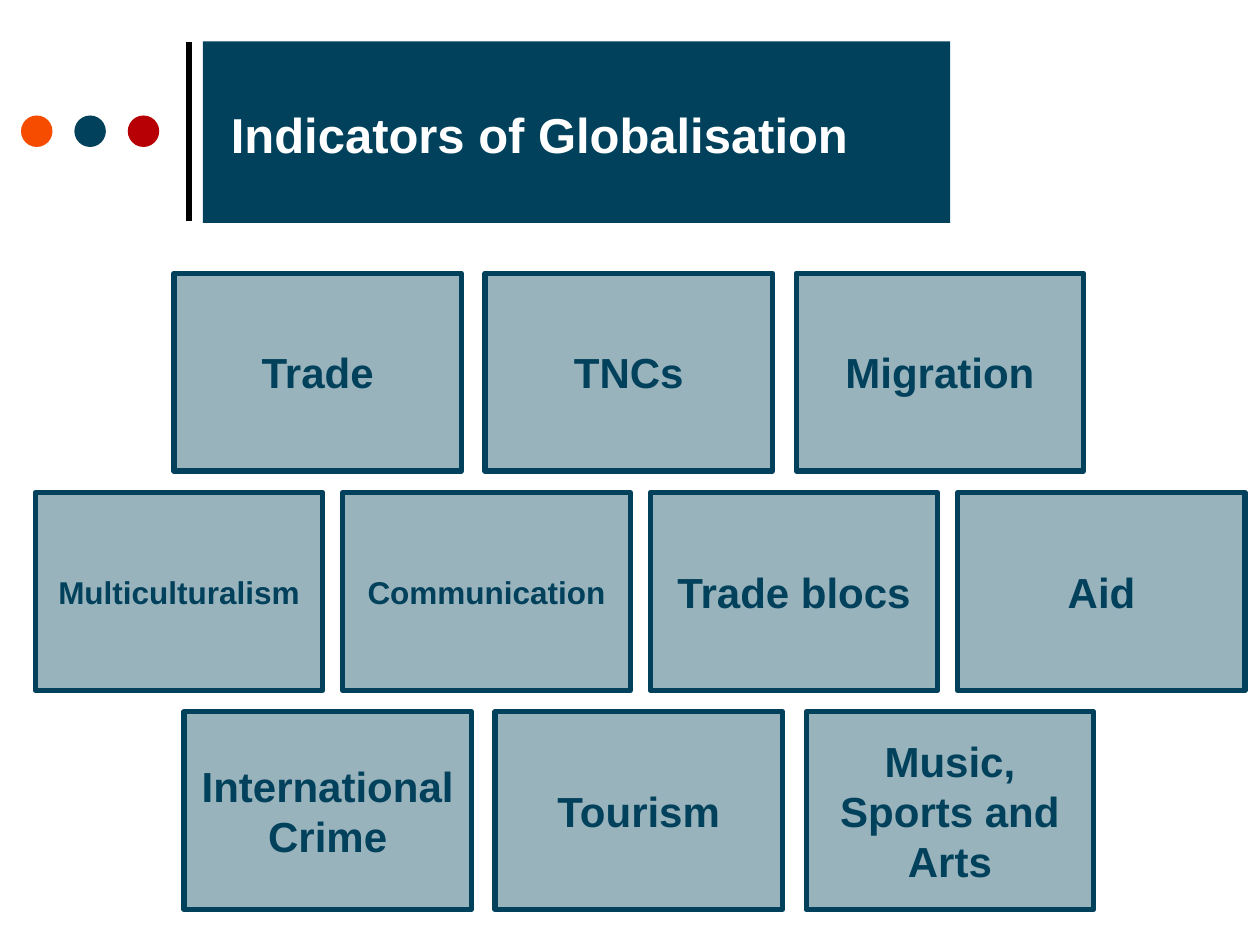
import pptx
import pptx.util
from pptx.dml.color import RGBColor
from pptx.enum.shapes import MSO_CONNECTOR, MSO_SHAPE
from pptx.enum.text import MSO_ANCHOR, PP_ALIGN
from pptx.oxml.ns import qn
from lxml import etree

Pt = pptx.util.Pt

NAVY = RGBColor(0x01, 0x41, 0x5B)
PALE = RGBColor(0x99, 0xB3, 0xBD)
ORANGE = RGBColor(0xF5, 0x4C, 0x00)
RED = RGBColor(0xB7, 0x00, 0x05)
BLACK = RGBColor(0, 0, 0)
WHITE = RGBColor(0xFF, 0xFF, 0xFF)

TITLE = "Indicators of Globalisation"
DOTS = [ORANGE, NAVY, RED]
ROWS = [
    (99.4, 177.8, [("Trade", 24), ("TNCs", 24), ("Migration", 24)]),
    (20.2, 175.7, [("Multiculturalism", 18), ("Communication", 18),
                   ("Trade blocs", 24), ("Aid", 24)]),
    (105.1, 177.8, [("International Crime", 24), ("Tourism", 24),
                    ("Music, Sports and Arts", 24)]),
]
TOP, STEP = 156.2, 125.3
WIDE, HIGH = 164.2, 113


def add_shape(slide, kind, box, fill):
    shape = slide.shapes.add_shape(kind, *map(Pt, box))
    shape.shadow.inherit = False
    shape.fill.solid()
    shape.fill.fore_color.rgb = fill
    shape.line.fill.background()
    return shape


def set_text(shape, text, size, color, align):
    frame = shape.text_frame
    frame.word_wrap = True
    frame.vertical_anchor = MSO_ANCHOR.MIDDLE
    frame.text = text
    para = frame.paragraphs[0]
    para.alignment = align
    font = para.runs[0].font
    font.name = "Arial"
    font.size = Pt(size)
    font.bold = True
    font.color.rgb = color


def add_head(slide):
    rule = slide.shapes.add_connector(
        MSO_CONNECTOR.STRAIGHT, Pt(108), Pt(126), Pt(108), Pt(24))
    rule.line.color.rgb = BLACK
    rule.line.width = Pt(3)
    etree.SubElement(rule.element.spPr, qn("a:effectLst"))
    for col, color in enumerate(DOTS):
        add_shape(slide, MSO_SHAPE.OVAL, (12 + col * 30.5, 66, 18, 18), color)
    title = add_shape(slide, MSO_SHAPE.RECTANGLE, (116, 23.6, 427, 103.8), NAVY)
    set_text(title, TITLE, 28, WHITE, PP_ALIGN.LEFT)
    title.text_frame.margin_left = Pt(16)
    title.text_frame.margin_top = Pt(6)


def add_grid(slide):
    for row, (left, pitch, cells) in enumerate(ROWS):
        for col, (text, size) in enumerate(cells):
            box = (left + col * pitch, TOP + row * STEP, WIDE, HIGH)
            cell = add_shape(slide, MSO_SHAPE.RECTANGLE, box, PALE)
            cell.line.color.rgb = NAVY
            cell.line.width = Pt(3)
            set_text(cell, text, size, NAVY, PP_ALIGN.CENTER)


def main():
    deck = pptx.Presentation()
    deck.slide_width = Pt(720)
    deck.slide_height = Pt(540)
    slide = deck.slides.add_slide(deck.slide_layouts[6])
    add_head(slide)
    add_grid(slide)
    deck.save("out.pptx")


if __name__ == "__main__":
    main()
